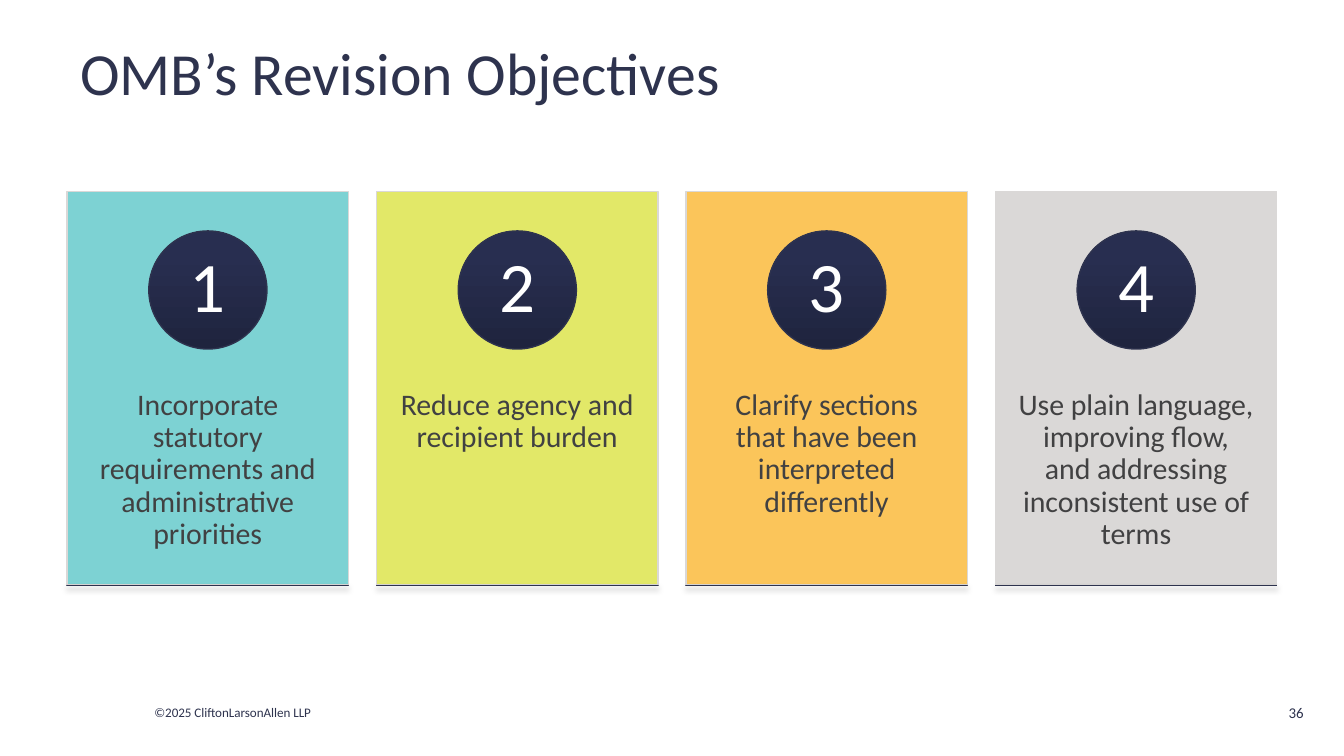
from copy import deepcopy
from dataclasses import dataclass

from lxml import etree
from pptx import Presentation
from pptx.dml.color import RGBColor
from pptx.enum.shapes import MSO_SHAPE
from pptx.enum.text import MSO_ANCHOR, MSO_AUTO_SIZE, PP_ALIGN
from pptx.oxml.ns import qn
from pptx.util import Inches, Pt

RECT, OVAL = MSO_SHAPE.RECTANGLE, MSO_SHAPE.OVAL
TOP, MIDDLE = MSO_ANCHOR.TOP, MSO_ANCHOR.MIDDLE
LEFT, CENTER, RIGHT = PP_ALIGN.LEFT, PP_ALIGN.CENTER, PP_ALIGN.RIGHT
FIXED = MSO_AUTO_SIZE.NONE


@dataclass(frozen=True)
class Theme:
    font: str = "Calibri"
    navy: str = "2E334E"
    body: str = "414142"
    white: str = "FFFFFF"
    border: str = "DAD8D7"
    gradient: tuple = ((0, "1F243E"), (0.8, "282E50"), (1, "272E51"))
    title_size: int = 32
    number_size: int = 38
    body_size: int = 16
    copyright_size: int = 7
    page_size: int = 8
    line_width: float = 0.75


THEME = Theme()
WIDTH = 10
HEIGHT = WIDTH * 9 / 16
GAP_SHARE = 0.1  # gap between cards as a share of card width

# Insets in points: sides, top and bottom
PLAIN_INSETS = (7.2, 3.6)
CARD_INSETS = (12, 26)
BADGE_INSETS = (5, 1)

OBJECTIVES = [
    ("7DD2D3", "Incorporate statutory requirements and administrative priorities"),
    ("E2E868", "Reduce agency and recipient burden"),
    ("FBC55A", "Clarify sections that have been interpreted differently"),
    ("DAD8D7", "Use plain language, improving flow, and addressing inconsistent use of terms"),
]


def add_text(slide, box, text, size, color, align=LEFT, anchor=MIDDLE,
             insets=PLAIN_INSETS, spacing=None):
    frame = slide.shapes.add_textbox(*map(Inches, box)).text_frame
    frame.word_wrap = True
    frame.auto_size = FIXED
    frame.vertical_anchor = anchor
    frame.margin_left = frame.margin_right = Pt(insets[0])
    frame.margin_top = frame.margin_bottom = Pt(insets[1])
    paragraph = frame.paragraphs[0]
    paragraph.alignment = align
    if spacing:
        paragraph.line_spacing = spacing
    run = paragraph.add_run()
    run.text = text
    run.font.name = THEME.font
    run.font.size = Pt(size)
    run.font.color.rgb = RGBColor.from_string(color)


def add_outlined(slide, kind, box, line_color):
    shape = slide.shapes.add_shape(kind, *map(Inches, box))
    shape.shadow.inherit = False
    shape.line.color.rgb = RGBColor.from_string(line_color)
    shape.line.width = Pt(THEME.line_width)
    return shape


def fill_navy_gradient(shape):
    shape.fill.gradient()
    shape.fill.gradient_angle = 90
    stop_list = shape.element.spPr.find(".//" + qn("a:gsLst"))
    stop_list.append(deepcopy(stop_list[0]))
    for stop, (position, color) in zip(shape.fill.gradient_stops, THEME.gradient):
        stop.position = position
        stop.color.rgb = RGBColor.from_string(color)


def add_drop_shadow(shape):
    effects = shape.element.spPr.find(qn("a:effectLst"))
    shadow = etree.SubElement(effects, qn("a:outerShdw"), blurRad=str(Pt(3.1)),
                              dist=str(Pt(1.8)), dir="5400000", rotWithShape="0")
    color = etree.SubElement(shadow, qn("a:srgbClr"), val="000000")
    etree.SubElement(color, qn("a:alpha"), val="35000")


def add_card(slide, box, number, color, text):
    left, top, width, height = box
    # Panel and its description
    panel = add_outlined(slide, RECT, box, THEME.border)
    panel.fill.solid()
    panel.fill.fore_color.rgb = RGBColor.from_string(color)
    add_text(slide, (left, top + 0.38 * height, width, 0.6 * height), text,
             THEME.body_size, THEME.body, CENTER, TOP, CARD_INSETS, 0.9)

    # Numbered badge
    diameter = 0.3 * height
    badge_left = left + (width - diameter) / 2
    badge_top = top + 0.1 * height
    badge = add_outlined(slide, OVAL, (badge_left, badge_top, diameter, diameter), THEME.navy)
    fill_navy_gradient(badge)
    inset = 0.15 * diameter
    side = diameter - 2 * inset
    add_text(slide, (badge_left + inset, badge_top + inset, side, side), str(number),
             THEME.number_size, THEME.white, CENTER, MIDDLE, BADGE_INSETS, 0.9)

    # Base rule: a flat bar with a soft shadow
    base = add_outlined(slide, RECT, (left, top + height, width, 0), THEME.navy)
    fill_navy_gradient(base)
    add_drop_shadow(base)


def add_cards(slide, box):
    left, top, width, height = box
    count = len(OBJECTIVES)
    card_width = width / (count + GAP_SHARE * (count - 1))
    pitch = card_width * (1 + GAP_SHARE)
    for index, (color, text) in enumerate(OBJECTIVES):
        add_card(slide, (left + index * pitch, top, card_width, height),
                 index + 1, color, text)


def add_title(slide, box):
    add_text(slide, box, "OMB’s Revision Objectives", THEME.title_size, THEME.navy)


def add_footer(slide, box):
    left, top, width, height = box
    add_text(slide, (left + 0.105 * width, top + 0.08, 1.51, 0.22),
             "©2025 CliftonLarsonAllen LLP", THEME.copyright_size, THEME.navy)
    add_text(slide, (left + width - 0.63, top, 0.43, height), "36",
             THEME.page_size, THEME.navy, RIGHT)


def main():
    deck = Presentation()
    deck.slide_width, deck.slide_height = Inches(WIDTH), Inches(HEIGHT)
    slide = deck.slides.add_slide(deck.slide_layouts[6])
    margin = 0.05 * WIDTH
    content_width = WIDTH - 2 * margin
    add_footer(slide, (0, 5.11, WIDTH, 0.38))
    add_title(slide, (margin, 0.16, content_width, 0.75))
    add_cards(slide, (margin, HEIGHT - 4.2, content_width, 2.93))
    deck.save("out.pptx")


if __name__ == "__main__":
    main()
